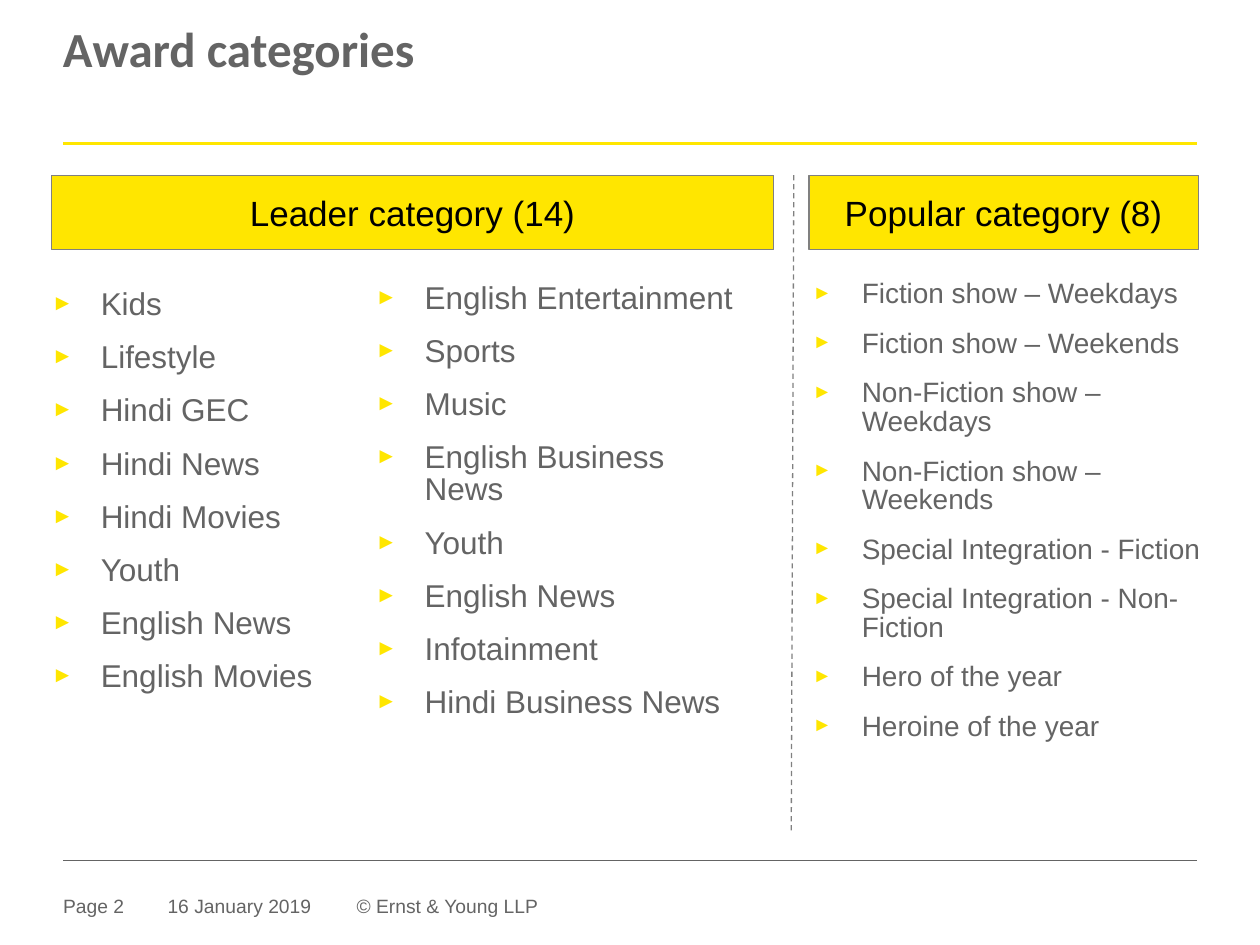
from dataclasses import dataclass

import pptx
import pptx.dml.color
import pptx.enum.dml
import pptx.enum.shapes
import pptx.enum.text
import pptx.oxml.ns
import pptx.util
from lxml import etree

Inches = pptx.util.Inches
Pt = pptx.util.Pt
ALIGN = pptx.enum.text.PP_ALIGN
ANCHOR = pptx.enum.text.MSO_ANCHOR


@dataclass(frozen=True)
class Theme:
    yellow: str = "FFE600"
    grey: str = "646464"
    border: str = "808080"
    black: str = "000000"
    body_font: str = "Arial"
    title_font: str = "Calibri"
    title_size: int = 28
    header_size: int = 20
    leader_size: int = 18
    popular_size: int = 16
    footer_size: int = 11
    line_spacing: float = 0.85


THEME = Theme()

LEADER_LEFT = ["Kids", "Lifestyle", "Hindi GEC", "Hindi News", "Hindi Movies",
               "Youth", "English News", "English Movies"]
LEADER_RIGHT = ["English Entertainment", "Sports", "Music", "English Business News",
                "Youth", "English News", "Infotainment", "Hindi Business News"]
POPULAR = ["Fiction show – Weekdays", "Fiction show – Weekends",
           "Non-Fiction show – Weekdays", "Non-Fiction show – Weekends",
           "Special Integration - Fiction", "Special Integration - Non-Fiction",
           "Hero of the year", "Heroine of the year"]


def rgb(color):
    return pptx.dml.color.RGBColor.from_string(color)


def write(p, text, *, size, color=THEME.grey, font=THEME.body_font, bold=False,
          align=ALIGN.LEFT, spacing=None):
    p.alignment = align
    p.line_spacing = spacing
    r = p.add_run()
    r.text = text
    r.font.size = Pt(size)
    r.font.name = font
    r.font.bold = bold
    r.font.color.rgb = rgb(color)


def add_text_frame(slide, left, top, width, height, inset_top=0):
    box = slide.shapes.add_textbox(Inches(left), Inches(top), Inches(width), Inches(height))
    tf = box.text_frame
    tf.word_wrap = True
    tf.margin_left = tf.margin_right = tf.margin_bottom = 0
    tf.margin_top = Inches(inset_top)
    return tf


def add_label(slide, text, left, top, width, height, **style):
    tf = add_text_frame(slide, left, top, width, height)
    write(tf.paragraphs[0], text, **style)


def add_line(slide, start, end, color, width, dash=None):
    line = slide.shapes.add_connector(
        pptx.enum.shapes.MSO_CONNECTOR.STRAIGHT,
        *(Inches(value) for value in (*start, *end)))
    line.line.color.rgb = rgb(color)
    line.line.width = Pt(width)
    if dash:
        line.line.dash_style = dash
    sp_pr = line._element.spPr
    etree.SubElement(sp_pr, pptx.oxml.ns.qn("a:effectLst"))


def add_header(slide, text, left, width):
    sp = slide.shapes.add_shape(pptx.enum.shapes.MSO_SHAPE.RECTANGLE, Inches(left),
                                Inches(1.39), Inches(width), Inches(0.59))
    sp.shadow.inherit = False
    sp.fill.solid()
    sp.fill.fore_color.rgb = rgb(THEME.yellow)
    sp.line.color.rgb = rgb(THEME.border)
    sp.line.width = Pt(0.75)
    tf = sp.text_frame
    tf.vertical_anchor = ANCHOR.MIDDLE
    write(tf.paragraphs[0], text, size=THEME.header_size, color=THEME.black,
          align=ALIGN.CENTER)


def set_bullet(p):
    """Give the paragraph a hanging yellow arrow at 70% of the text size."""
    qn = pptx.oxml.ns.qn
    p_pr = p._p.get_or_add_pPr()
    p_pr.set("marL", str(Inches(0.39)))
    p_pr.set("indent", str(-Inches(0.39)))
    color = etree.SubElement(p_pr, qn("a:buClr"))
    etree.SubElement(color, qn("a:srgbClr"), val=THEME.yellow)
    etree.SubElement(p_pr, qn("a:buSzPct"), val="70000")
    etree.SubElement(p_pr, qn("a:buFont"), typeface=THEME.body_font)
    etree.SubElement(p_pr, qn("a:buChar"), char="►")


def add_bullet_list(slide, items, left, top, width, height, size):
    tf = add_text_frame(slide, left, top, width, height, inset_top=0.04)
    for i, item in enumerate(items):
        p = tf.add_paragraph() if i else tf.paragraphs[0]
        set_bullet(p)
        p.space_before = Pt(6 if i else 0)
        p.space_after = Pt(6)
        write(p, item, size=size, spacing=THEME.line_spacing)


def add_footer(slide):
    add_line(slide, (0.5, 6.83), (9.5, 6.83), THEME.grey, 0.25)
    for text, left, width in (("Page 2", 0.5, 0.79),
                              ("16 January 2019", 1.33, 1.3),
                              ("© Ernst & Young LLP", 2.83, 3.76)):
        add_label(slide, text, left, 7.1, width, 0.22, size=THEME.footer_size)


def main():
    prs = pptx.Presentation()
    prs.slide_width, prs.slide_height = Inches(10), Inches(7.5)
    slide = prs.slides.add_slide(prs.slide_layouts[6])

    add_footer(slide)
    add_line(slide, (0.5, 1.14), (9.5, 1.14), THEME.yellow, 1.5)
    add_label(slide, "Award categories", 0.5, 0.22, 9, 0.94, size=THEME.title_size,
              font=THEME.title_font, bold=True, spacing=THEME.line_spacing)

    add_header(slide, "Leader category (14)", 0.41, 5.73)
    add_header(slide, "Popular category (8)", 6.42, 3.09)
    add_bullet_list(slide, LEADER_LEFT, 0.41, 2.26, 2.86, 3.28, THEME.leader_size)
    add_bullet_list(slide, LEADER_RIGHT, 2.98, 2.21, 2.86, 3.54, THEME.leader_size)
    add_bullet_list(slide, POPULAR, 6.45, 2.19, 3.18, 4.28, THEME.popular_size)
    add_line(slide, (6.3, 1.39), (6.28, 6.59), THEME.border, 0.75,
             pptx.enum.dml.MSO_LINE.DASH)

    prs.save("out.pptx")


if __name__ == "__main__":
    main()
